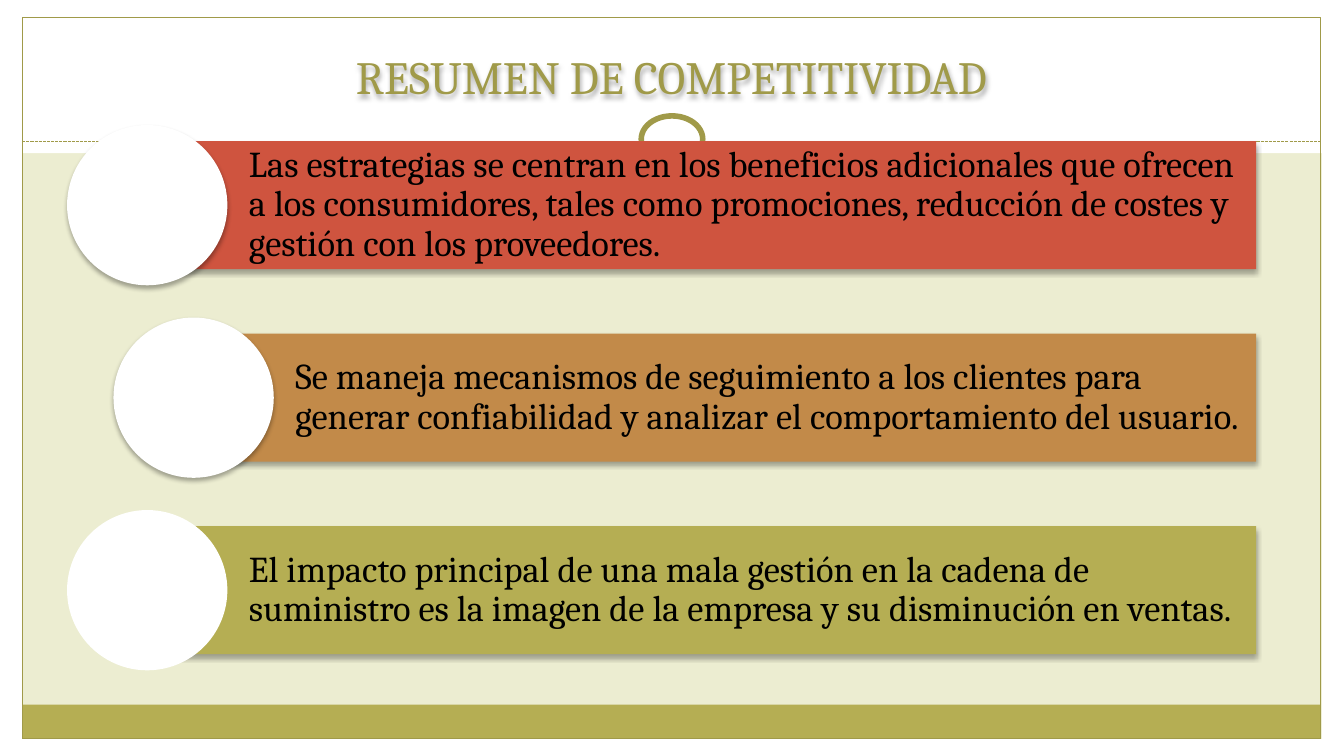
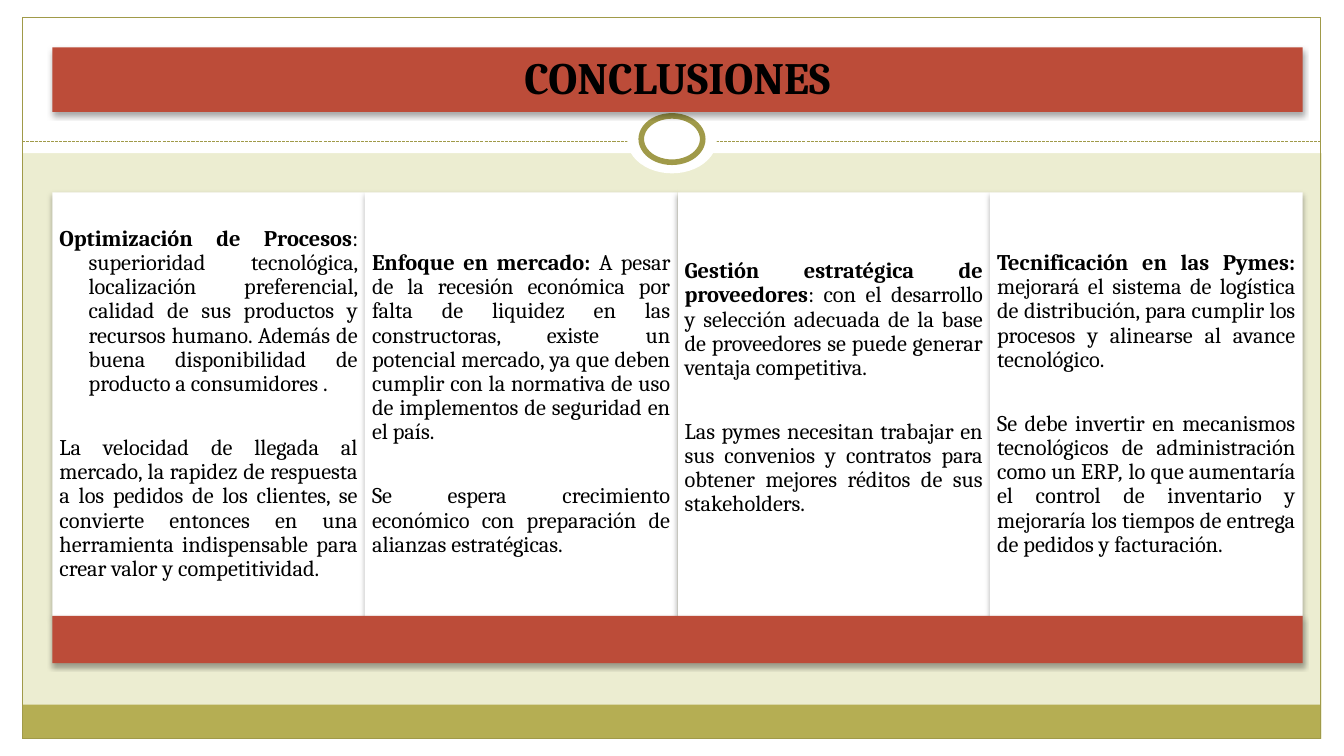
from dataclasses import dataclass

from lxml.etree import SubElement
from pptx import Presentation
from pptx.dml.color import RGBColor
from pptx.enum.dml import MSO_LINE_DASH_STYLE as Dash
from pptx.enum.shapes import MSO_CONNECTOR as Connector, MSO_SHAPE as Preset
from pptx.enum.text import MSO_ANCHOR as Anchor, PP_ALIGN as Align
from pptx.oxml.ns import qn
from pptx.util import Inches, Pt


@dataclass(frozen=True)
class Theme:
    font: str = "Cambria"
    white: str = "FFFFFF"
    black: str = "000000"
    background: str = "ECEDD1"
    olive: str = "B5AE53"
    olive_dark: str = "A09A49"
    red: str = "CF543F"
    red_dark: str = "BC4C39"
    ochre: str = "C28A49"
    title_size: float = 33
    heading_size: float = 32
    band_size: float = 26
    body_size: float = 16
    paragraph_gap: float = 28.5
    line_spacing: float = 0.9


SOFT_SHADOW = (32, 3.5, 2.2)
DEEP_SHADOW = (35, 4, 2)
WIDTH, HEIGHT = 13.33, 7.5


class SlideBuilder:
    def __init__(self, theme):
        self.theme = theme
        self.deck = Presentation()
        self.deck.slide_width = Inches(WIDTH)
        self.deck.slide_height = Inches(HEIGHT)
        self.page = None

    def new_page(self):
        self.page = self.deck.slides.add_slide(self.deck.slide_layouts[6])
        fill = self.page.background.fill
        fill.solid()
        fill.fore_color.rgb = RGBColor.from_string(self.theme.background)
        self.frame()

    def frame(self):
        theme = self.theme
        margins = [
            (0, 7.33, WIDTH, 0.17),
            (0, 0, WIDTH, 1.52),
            (0, 0, 0.22, HEIGHT),
            (13.11, 0, 0.22, HEIGHT),
        ]
        for place in margins:
            self.shape(place, theme.white)
        self.shape((0.22, 6.99, 12.88, 0.34), theme.olive)
        self.shape((0.22, 0.17, 12.88, 7.16), line=(theme.olive_dark, 0.75))
        self.rule(0.22, 13.1, 1.4)
        self.shape((6.22, 1.05, 0.89, 0.67), theme.white, preset=Preset.OVAL)
        self.shape((6.36, 1.15, 0.61, 0.46), theme.white,
                   line=(theme.olive_dark, 4), preset=Preset.OVAL)

    def shape(self, place, fill=None, line=None, shadow=None,
              preset=Preset.RECTANGLE):
        item = self.page.shapes.add_shape(preset, *map(Inches, place))
        if fill:
            item.fill.solid()
            item.fill.fore_color.rgb = RGBColor.from_string(fill)
        else:
            item.fill.background()
        if line:
            color, width = line
            item.line.color.rgb = RGBColor.from_string(color)
            item.line.width = Pt(width)
        else:
            item.line.fill.background()
        self.shade(item, shadow)
        return item

    def shade(self, item, shadow):
        item.shadow.inherit = False
        if not shadow:
            return
        opacity, blur, distance = shadow
        effects = item._element.spPr.find(qn("a:effectLst"))
        outer = SubElement(effects, qn("a:outerShdw"), blurRad=str(Pt(blur)),
                           dist=str(Pt(distance)), dir="5400000",
                           rotWithShape="0")
        color = SubElement(outer, qn("a:srgbClr"), val=self.theme.black)
        SubElement(color, qn("a:alpha"), val=str(opacity * 1000))

    def rule(self, left, right, top):
        line = self.page.shapes.add_connector(
            Connector.STRAIGHT, Inches(left), Inches(top), Inches(right), Inches(top))
        line.line.color.rgb = RGBColor.from_string(self.theme.olive_dark)
        line.line.width = Pt(0.75)
        line.line.dash_style = Dash.SQUARE_DOT
        SubElement(line._element.spPr, qn("a:effectLst"))

    def add_text(self, box, paragraphs, size, align, insets, color=None,
                 anchor=Anchor.MIDDLE, spacing=None, hanging=0):
        frame = box.text_frame
        frame.word_wrap = True
        frame.vertical_anchor = anchor
        (frame.margin_left, frame.margin_top,
         frame.margin_right, frame.margin_bottom) = map(Inches, insets)
        for index, spans in enumerate(paragraphs):
            para = frame.add_paragraph() if index else frame.paragraphs[0]
            para.alignment = align
            para.line_spacing = spacing or self.theme.line_spacing
            if index:
                para.space_before = Pt(self.theme.paragraph_gap)
            elif hanging:
                properties = para._p.get_or_add_pPr()
                properties.set("marL", str(Inches(hanging)))
                properties.set("indent", str(-Inches(hanging)))
            for text, style in spans:
                span = para.add_run()
                span.text = text
                span.font.name = self.theme.font
                span.font.size = Pt(size)
                span.font.bold = style == "bold"
                span.font.italic = style == "italic"
                span.font.color.rgb = RGBColor.from_string(color or self.theme.black)

    def title(self, text):
        place = (0.44, 0.25, 12.44, 0.83)
        box = self.page.shapes.add_textbox(*map(Inches, place))
        self.shade(box, SOFT_SHADOW)
        self.add_text(box, [[(text, "")]], self.theme.title_size, Align.CENTER,
                      (0.1, 0.05, 0.1, 0.05), self.theme.olive_dark,
                      Anchor.BOTTOM, spacing=1.0)

    def circle_band(self, left, top, fill, text, circle_shadow):
        right, height, diameter = 12.46, 1.27, 1.59
        band = self.shape((left, top, right - left, height), fill, shadow=SOFT_SHADOW)
        self.add_text(band, [[(text, "")]], self.theme.band_size, Align.LEFT,
                      (1.01, 0.07, 0.07, 0.07))
        self.shape((left - diameter / 2, top + (height - diameter) / 2,
                    diameter, diameter), self.theme.white,
                   shadow=circle_shadow, preset=Preset.OVAL)

    def heading_band(self, place, text=None):
        band = self.shape(place, self.theme.red_dark, shadow=DEEP_SHADOW)
        if text:
            self.add_text(band, [[(text, "bold")]], self.theme.heading_size,
                          Align.CENTER, (0.13,) * 4)

    def column(self, place, paragraphs, hanging=0, bottom=0.07):
        card = self.shape(place, self.theme.white, shadow=DEEP_SHADOW)
        self.add_text(card, paragraphs, self.theme.body_size, Align.JUSTIFY,
                      (0.07, 0.07, 0.07, bottom), hanging=hanging)


def summary_page(builder):
    theme = builder.theme
    builder.new_page()
    builder.title("RESUMEN DE COMPETITIVIDAD")
    bands = [
        (1.46, theme.red, SOFT_SHADOW,
         "Las estrategias se centran en los beneficios adicionales que ofrecen "
         "a los consumidores, tales como promociones, reducción de costes y "
         "gestión con los proveedores."),
        (1.92, theme.ochre, SOFT_SHADOW,
         "Se maneja mecanismos de seguimiento a los clientes para generar "
         "confiabilidad y analizar el comportamiento del usuario."),
        (1.46, theme.olive, None,
         "El impacto principal de una mala gestión en la cadena de suministro "
         "es la imagen de la empresa y su disminución en ventas."),
    ]
    for index, (left, fill, circle_shadow, text) in enumerate(bands):
        builder.circle_band(left, 1.4 + index * 1.91, fill, text, circle_shadow)


def conclusions_page(builder):
    builder.new_page()
    left, width, top, height = 0.52, 3.1, 1.91, 4.2
    columns = [
        ([[("Optimización de Procesos", "bold"),
           (": superioridad tecnológica, localización preferencial, calidad de "
            "sus productos y recursos humano. Además de buena disponibilidad de "
            "producto a consumidores .", "")],
          [("La velocidad de llegada al mercado, la rapidez de respuesta a los "
            "pedidos de los clientes, se convierte entonces en una herramienta "
            "indispensable para crear valor y competitividad.", "")]],
         {"hanging": 0.29}),
        ([[("Enfoque en mercado: ", "bold"),
           ("A pesar de la recesión económica por falta de liquidez en las "
            "constructoras, existe un potencial mercado, ya que deben cumplir con "
            "la normativa de uso de implementos de seguridad en el país.", "")],
          [("Se espera crecimiento económico con preparación de alianzas "
            "estratégicas.", "")]],
         {}),
        ([[("Gestión estratégica de proveedores", "bold"),
           (": con el desarrollo y selección adecuada de la base de proveedores "
            "se puede generar ventaja competitiva.", "")],
          [("Las pymes necesitan trabajar en sus convenios y contratos para "
            "obtener mejores réditos de sus stakeholders.", "")]],
         {"bottom": 0.39}),
        ([[("Tecnificación en las Pymes: ", "bold"),
           ("mejorará el sistema de logística de distribución, para cumplir los "
            "procesos y alinearse al avance tecnológico.", "")],
          [("Se debe invertir en mecanismos tecnológicos de administración como "
            "un ERP", ""),
           (",", "italic"),
           (" lo que aumentaría el control de inventario y mejoraría los tiempos "
            "de entrega de pedidos y facturación.", "")]],
         {}),
    ]
    full_width = width * len(columns)
    builder.heading_band((left, 0.47, full_width, 0.64), "CONCLUSIONES")
    for index, (paragraphs, options) in enumerate(columns):
        builder.column((left + index * width, top, width, height),
                       paragraphs, **options)
    builder.heading_band((left, top + height, full_width, 0.47))


def main():
    builder = SlideBuilder(Theme())
    summary_page(builder)
    conclusions_page(builder)
    builder.deck.save("out.pptx")


if __name__ == "__main__":
    main()
